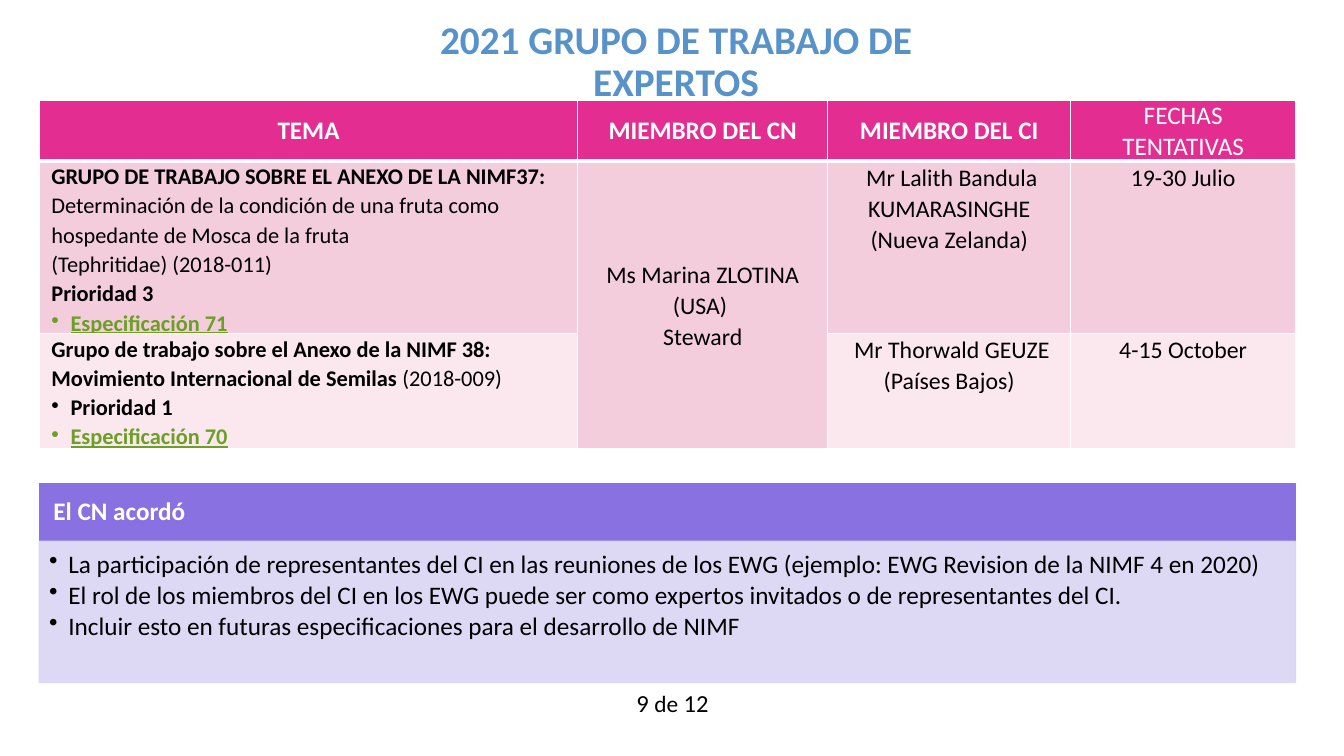
from dataclasses import dataclass

from lxml import etree
from pptx import Presentation
from pptx.dml.color import RGBColor
from pptx.enum.shapes import MSO_SHAPE
from pptx.enum.text import MSO_ANCHOR, MSO_AUTO_SIZE, PP_ALIGN
from pptx.oxml import parse_xml
from pptx.oxml.ns import nsdecls, qn
from pptx.util import Inches, Pt

RECT = MSO_SHAPE.RECTANGLE
TOP, MIDDLE = MSO_ANCHOR.TOP, MSO_ANCHOR.MIDDLE
LEFT, CENTER = PP_ALIGN.LEFT, PP_ALIGN.CENTER


@dataclass(frozen=True)
class Theme:
    font: str = "Calibri"
    title: str = "5792C9"
    white: str = "FFFFFF"
    black: str = "000000"
    link: str = "6B9F25"
    header: str = "E32D91"
    row_dark: str = "F4CDDC"
    row_light: str = "FAE8EE"
    panel_head: str = "8971E1"
    panel_body: str = "DAD5F4"
    title_size: float = 28
    head_size: float = 18
    topic_size: float = 16
    member_size: float = 17
    page_size: float = 17.5
    page_word_size: float = 16.7


T = Theme()
MARGIN, WIDTH = 0.39, 12.46
COLUMN_WIDTHS = (5.34, 2.48, 2.41, 2.23)
ROW_HEIGHTS = (0.5, 1.51, 1.01)
HEADERS = ("TEMA", "MIEMBRO DEL CN", "MIEMBRO DEL CI", "FECHAS TENTATIVAS")

# Each paragraph is (bulleted, runs); each run is (text, style).
TOPICS = (
    (
        (False, (("GRUPO DE TRABAJO SOBRE EL ANEXO DE LA NIMF37: ", "bold"),
                 ("Determinación de la condición de una fruta como "
                  "hospedante de Mosca de la fruta", "plain"))),
        (False, (("(Tephritidae) (2018-011)", "plain"),)),
        (False, (("Prioridad 3", "bold"),)),
        (True, (("Especificación 71", "link"),)),
    ),
    (
        (False, (("Grupo de trabajo sobre el Anexo de la NIMF 38: "
                  "Movimiento Internacional de Semilas ", "bold"),
                 ("(2018-009)", "plain"))),
        (True, (("Prioridad 1", "bold"),)),
        (True, (("Especificación 70", "link"),)),
    ),
)
CN_MEMBER = ("Ms Marina ZLOTINA (USA) ", "Steward")
CI_MEMBERS = (
    (" Mr Lalith Bandula KUMARASINGHE", "(Nueva Zelanda)"),
    (" Mr Thorwald GEUZE (Países Bajos)",),
)
DATES = ("19-30 Julio", "4-15 October")
AGREEMENTS = (
    "La participación de representantes del CI en las reuniones de los EWG "
    "(ejemplo: EWG Revision de la NIMF 4 en 2020)",
    "El rol de los miembros del CI en los EWG puede ser como expertos "
    "invitados o de representantes del CI.",
    "Incluir esto en futuras especificaciones para el desarrollo de NIMF",
)


def rgb(color):
    return RGBColor.from_string(color)


def format_run(r, size, color, bold=False, underline=False):
    f = r.font
    f.name, f.size, f.bold, f.underline = T.font, Pt(size), bold, underline
    f.color.rgb = rgb(color)


def add_bullet(p):
    pPr = p._p.get_or_add_pPr()
    pPr.set("marL", str(Inches(0.19)))
    pPr.set("indent", str(-Inches(0.19)))
    etree.SubElement(pPr, qn("a:buChar")).set("char", "•")


def set_margins(target, left, top, right, bottom):
    """Set the insets of a text frame or a table cell."""
    target.margin_left, target.margin_top = Inches(left), Inches(top)
    target.margin_right, target.margin_bottom = Inches(right), Inches(bottom)


def write_lines(tf, lines, size, color, align=LEFT, bold=False,
                spacing=1.0, after=0, bullets=False):
    tf.text = "\n".join(lines)
    for p in tf.paragraphs:
        if bullets:
            add_bullet(p)
        p.alignment, p.line_spacing, p.space_after = align, spacing, Pt(after)
        for r in p.runs:
            format_run(r, size, color, bold)


def write_topic(tf, topic):
    for i, (bulleted, runs) in enumerate(topic):
        p = tf.add_paragraph() if i else tf.paragraphs[0]
        if bulleted:
            add_bullet(p)
        p.line_spacing = 1.07
        for text, style in runs:
            r = p.add_run()
            r.text = text
            is_link = style == "link"
            format_run(r, T.topic_size, T.link if is_link else T.black,
                       style != "plain", is_link)


def style_cell(cell, fill, anchor, side, bottom_border=1):
    tcPr = cell._tc.get_or_add_tcPr()
    for edge, width in (("L", 1), ("R", 1), ("T", 1), ("B", bottom_border)):
        tcPr.append(parse_xml(
            f'<a:ln{edge} {nsdecls("a")} w="{Pt(width)}"><a:solidFill>'
            f'<a:srgbClr val="{T.white}"/></a:solidFill></a:ln{edge}>'))
    cell.fill.solid()
    cell.fill.fore_color.rgb = rgb(fill)
    cell.vertical_anchor = anchor
    set_margins(cell, side, 0, side, 0)


def add_groups_table(slide):
    table = slide.shapes.add_table(
        len(ROW_HEIGHTS), len(COLUMN_WIDTHS), Inches(MARGIN), Inches(1),
        Inches(WIDTH), Inches(sum(ROW_HEIGHTS))).table
    table.horz_banding = False
    for column, width in zip(table.columns, COLUMN_WIDTHS):
        column.width = Inches(width)
    for row, height in zip(table.rows, ROW_HEIGHTS):
        row.height = Inches(height)
    table.cell(1, 1).merge(table.cell(2, 1))

    sides = (0.12, 0, 0, 0.12)
    for c, (header, side) in enumerate(zip(HEADERS, sides)):
        cell = table.cell(0, c)
        style_cell(cell, T.header, MIDDLE, side, bottom_border=3)
        write_lines(cell.text_frame, [header], T.head_size, T.white, CENTER,
                    bold=header != HEADERS[-1])
        for r, fill in enumerate((T.row_dark, T.row_light), 1):
            style_cell(table.cell(r, c), T.row_dark if c == 1 else fill,
                       MIDDLE if c == 1 else TOP, side)

    centred = {(1, 1): CN_MEMBER}
    for r, (topic, member, date) in enumerate(zip(TOPICS, CI_MEMBERS, DATES), 1):
        write_topic(table.cell(r, 0).text_frame, topic)
        centred[r, 2], centred[r, 3] = member, (date,)
    for (r, c), lines in centred.items():
        write_lines(table.cell(r, c).text_frame, lines, T.member_size, T.black,
                    CENTER, spacing=1.07)


def add_panel(slide, top, height, color, anchor, margins, alpha=100):
    sp = slide.shapes.add_shape(RECT, Inches(MARGIN), Inches(top),
                                Inches(WIDTH), Inches(height))
    sp.shadow.inherit = False
    sp.line.width = Pt(1)
    for fill in (sp.fill, sp.line.fill):
        fill.solid()
        fill.fore_color.rgb = rgb(color)
    if alpha < 100:
        for clr in sp._element.spPr.iter(qn("a:srgbClr")):
            etree.SubElement(clr, qn("a:alpha")).set("val", str(alpha * 1000))
    tf = sp.text_frame
    tf.word_wrap, tf.vertical_anchor = True, anchor
    set_margins(tf, *margins)
    return tf


def add_text_box(slide, left, top, width, height, wrap):
    tf = slide.shapes.add_textbox(Inches(left), Inches(top), Inches(width),
                                  Inches(height)).text_frame
    tf.word_wrap = wrap
    return tf


def add_page_number(slide):
    tf = add_text_box(slide, 6.05, 6.75, 1.24, 0.46, wrap=False)
    tf.auto_size = MSO_AUTO_SIZE.SHAPE_TO_FIT_TEXT
    set_margins(tf, 0.17, 0.08, 0.17, 0.08)
    p = tf.paragraphs[0]
    p.alignment = CENTER
    for text, size in (("9 ", T.page_size), ("de", T.page_word_size),
                       (" 12", T.page_size)):
        r = p.add_run()
        r.text = text
        format_run(r, size, T.black)


def main():
    prs = Presentation()
    prs.slide_width, prs.slide_height = Inches(13.33), Inches(7.5)
    slide = prs.slides.add_slide(prs.slide_layouts[6])

    title = add_text_box(slide, 3.58, 0, 6.25, 1.25, wrap=True)
    title.vertical_anchor = MIDDLE
    write_lines(title, ["2021 GRUPO DE TRABAJO DE EXPERTOS"], T.title_size,
                T.title, CENTER, bold=True, spacing=0.9)
    add_groups_table(slide)
    head = add_panel(slide, 4.8, 0.57, T.panel_head, MIDDLE,
                     (0.14, 0.08, 0.14, 0.08))
    write_lines(head, ["El CN acordó"], T.head_size, T.white, bold=True,
                spacing=0.9)
    body = add_panel(slide, 5.37, 1.4, T.panel_body, TOP,
                     (0.1, 0.1, 0.14, 0.16), alpha=90)
    write_lines(body, AGREEMENTS, T.head_size, T.black, spacing=0.9,
                after=2.7, bullets=True)
    add_page_number(slide)
    prs.save("out.pptx")


if __name__ == "__main__":
    main()
